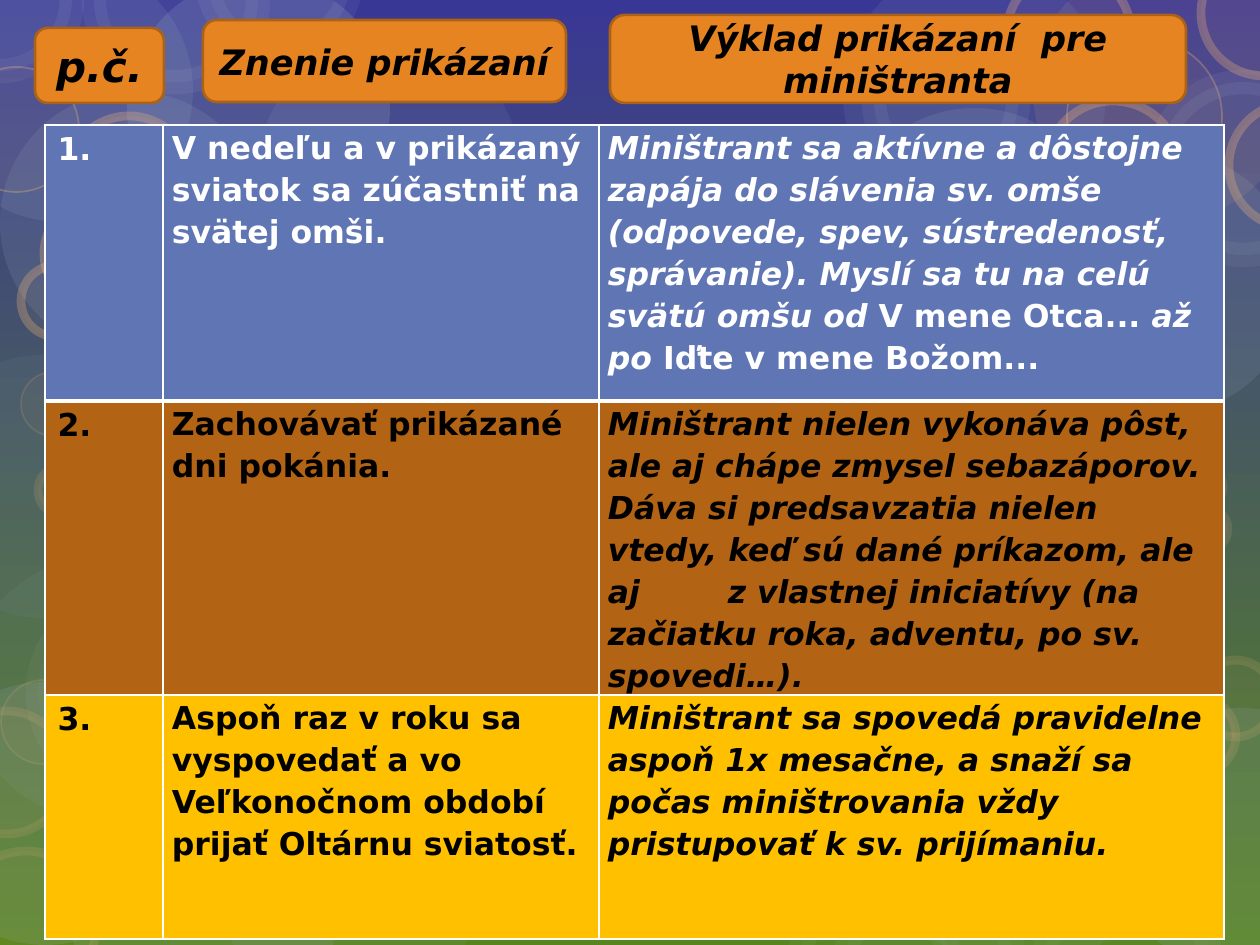
"""Build the slide of church commandments explained for altar servers."""
from lxml import etree
from pptx import Presentation
from pptx import util as u
from pptx.dml.color import RGBColor
from pptx.enum import shapes, text
from pptx.oxml.ns import qn

PX = 914400 / 126
FONT = "DejaVu Sans"
BLACK = RGBColor(0x00, 0x00, 0x00)
WHITE = RGBColor(0xFF, 0xFF, 0xFF)
SKY = RGBColor(0x39, 0x37, 0x95)
GRASS = RGBColor(0x58, 0x85, 0x1E)
MIST = RGBColor(0x9B, 0xAD, 0xC4)
HALO = RGBColor(0xEF, 0xF2, 0xF5)
PEACH = RGBColor(0xF0, 0xB5, 0x7A)
ORANGE = RGBColor(0xE6, 0x84, 0x22)
RUST = RGBColor(0xAA, 0x62, 0x19)
BLUE = RGBColor(0x60, 0x76, 0xB4)
BROWN = RGBColor(0xB2, 0x63, 0x14)
GOLD = RGBColor(0xFF, 0xC0, 0x00)

# fill, fill opacity, outline (colour, points, opacity), circles (left, top, diameter)
BUBBLES = [
    (MIST, 5, None, [(919, 601, 263)]),
    (MIST, 8, None, [(-32, 557, 263), (97, 660, 263), (218, 751, 263), (-88, 355, 263)]),
    (MIST, 10, None, [(72, 151, 263), (258, 39, 263), (843, -37, 263), (890, 708, 263),
                      (850, 330, 168)]),
    (MIST, 14, None, [(-70, -41, 263)]),
    (MIST, 15, None, [(0, 91, 263), (1033, 151, 263), (843, 108, 263)]),
    (MIST, 16, None, [(72, 790, 263), (1110, 708, 263), (-86, 682, 263)]),
    (MIST, 20, None, [(127, -23, 263)]),
    (PEACH, 10, None, [(1033, -41, 263)]),
    (MIST, 10, (HALO, 14, 6), [(1157, 82, 173), (874, 29, 144), (948, 200, 168),
                               (994, 282, 144), (1067, 367, 100), (94, -82, 164),
                               (207, -94, 144), (-72, -73, 144)]),
    (MIST, 6, (HALO, 14, 4), [(38, 596, 193), (796, 895, 156), (844, 883, 171),
                              (1043, 883, 168)]),
    (PEACH, 5, (PEACH, 1, 15), [(1, 680, 84), (1051, 774, 102), (1033, 679, 102),
                                (21, 372, 64), (66, 436, 63)]),
    (PEACH, 5, (PEACH, 5, 15), [(-45, 851, 142), (-55, 711, 123), (961, 722, 102),
                                (1134, 781, 83), (1113, 564, 77), (1159, 697, 77),
                                (1197, 660, 77), (1181, 466, 42), (1157, 488, 42),
                                (1186, 508, 42), (38, 466, 49)]),
    (PEACH, 5, (PEACH, 1, 30), [(-46, 67, 125), (52, 260, 84), (1067, 39, 155),
                                (1029, 183, 84)]),
    (PEACH, 5, (PEACH, 5, 30), [(66, 116, 126), (44, 200, 107), (21, 265, 72),
                                (1007, -29, 124), (1201, -50, 126), (1229, 103, 125),
                                (1046, 101, 134)]),
]
HEADERS = [
    ((35, 28, 129, 75), "p.č.", 24),
    ((203, 20, 363, 82), "Znenie prikázaní", 20),
    ((610, 15, 576, 88), "Výklad prikázaní  pre miništranta", 20),
]
COLUMNS = [118, 436, 625]
# height, fill, text colour, commandment, explanation as (text, italic) runs
ROWS = [
    (276, BLUE, WHITE, "V nedeľu a v prikázaný sviatok sa zúčastniť na svätej omši.",
     [("Miništrant sa aktívne a dôstojne zapája do slávenia sv. omše (odpovede, spev, "
       "sústredenosť, správanie). Myslí sa tu na celú svätú omšu od ", True),
      ("V mene Otca...", False), (" až po ", True), ("Iďte v mene Božom...", False)]),
    (270, BROWN, BLACK, "Zachovávať prikázané dni pokánia.",
     [("Miništrant nielen vykonáva pôst, ale aj chápe zmysel sebazáporov. Dáva si "
       "predsavzatia nielen vtedy, keď sú dané príkazom, ale aj\tz vlastnej iniciatívy "
       "(na začiatku roka, adventu, po sv. spovedi…).", True)]),
    (244, GOLD, BLACK,
     "Aspoň raz v roku sa vyspovedať a vo Veľkonočnom období prijať Oltárnu sviatosť.",
     [("Miništrant sa spovedá pravidelne aspoň 1x mesačne, a snaží sa počas "
       "miništrovania vždy pristupovať k sv. prijímaniu.", True)]),
]


def px(n):
    """Turn pixels into EMU."""
    return u.Emu(round(n * PX))


def set_opacity(sp, parent, percent):
    """Make the solid colour below the given element translucent."""
    clr = sp._element.spPr.find(parent + qn("a:solidFill") + "/" + qn("a:srgbClr"))
    etree.SubElement(clr, qn("a:alpha"), val=str(percent * 1000))


def add_run(p, words, size, color, italic=False):
    """Add a bold run to a paragraph."""
    r = p.add_run()
    r.text = words
    r.font.name, r.font.size = FONT, u.Pt(size)
    r.font.bold, r.font.italic = True, italic
    r.font.color.rgb = color


def add_solid(s, kind, box, fill):
    """Add a filled preset shape without a shadow."""
    sp = s.shapes.add_shape(kind, *map(px, box))
    sp.shadow.inherit = False
    sp.fill.solid()
    sp.fill.fore_color.rgb = fill
    return sp


def add_bubble(s, circle, fill, opacity, outline):
    """Add a translucent background circle."""
    left, top, size = circle
    sp = add_solid(s, shapes.MSO_SHAPE.OVAL, (left, top, size, size), fill)
    set_opacity(sp, "", opacity)
    if outline is None:
        sp.line.fill.background()
        return
    color, width, line_opacity = outline
    sp.line.color.rgb, sp.line.width = color, u.Pt(width)
    set_opacity(sp, qn("a:ln") + "/", line_opacity)


def add_header(s, box, words, size):
    """Add a rounded column heading."""
    sp = add_solid(s, shapes.MSO_SHAPE.ROUNDED_RECTANGLE, box, ORANGE)
    sp.line.color.rgb, sp.line.width = RUST, u.Pt(1.5)
    tf = sp.text_frame
    tf.word_wrap = True
    tf.vertical_anchor = text.MSO_ANCHOR.MIDDLE
    tf.paragraphs[0].alignment = text.PP_ALIGN.CENTER
    add_run(tf.paragraphs[0], words, size, BLACK, True)


def set_borders(cell, top, bottom):
    """Draw white cell borders with the given top and bottom points."""
    tc_pr = cell._tc.get_or_add_tcPr()
    for side, width in (("L", 1), ("R", 1), ("T", top), ("B", bottom)):
        ln = etree.SubElement(tc_pr, qn("a:ln" + side), w=str(u.Pt(width)))
        fill = etree.SubElement(ln, qn("a:solidFill"))
        etree.SubElement(fill, qn("a:srgbClr"), val=str(WHITE))


def add_tab_stop(p, position):
    """Give a paragraph one left tab stop."""
    tabs = etree.SubElement(p._p.get_or_add_pPr(), qn("a:tabLst"))
    etree.SubElement(tabs, qn("a:tab"), pos=str(px(position)), algn="l")


def fill_cell(cell, runs, fill, color, prose):
    """Fill a table cell, with tight insets and open lines for prose."""
    cell.fill.solid()
    cell.fill.fore_color.rgb = fill
    p = cell.text_frame.paragraphs[0]
    if prose:
        cell.margin_left = cell.margin_right = px(9)
        cell.margin_top = cell.margin_bottom = 0
        p.line_spacing = 1.15
    if any("\t" in words for words, _ in runs):
        add_tab_stop(p, 120)
    for words, italic in runs:
        add_run(p, words, 18, color, italic)


def add_commandments(s):
    """Add the numbered table of commandments and explanations."""
    height = sum(row[0] for row in ROWS)
    frame = s.shapes.add_table(len(ROWS), len(COLUMNS), px(45), px(125),
                               px(sum(COLUMNS)), px(height))
    table = frame.table
    table.first_row = table.horz_banding = False
    for column, width in zip(table.columns, COLUMNS):
        column.width = px(width)
    for i, (row_height, fill, color, rule, meaning) in enumerate(ROWS):
        table.rows[i].height = px(row_height)
        contents = [[(f"{i + 1}.", False)], [(rule, False)], meaning]
        for j, runs in enumerate(contents):
            cell = table.cell(i, j)
            set_borders(cell, 3 if i == 1 else 1, 3 if i == 0 else 1)
            fill_cell(cell, runs, fill, color, j > 0)


def paint_background(s):
    """Fill the background with a vertical gradient."""
    fill = s.background.fill
    fill.gradient()
    fill.gradient_angle = 270
    for stop, color in zip(fill.gradient_stops, (SKY, GRASS)):
        stop.color.rgb = color


def main():
    """Build and save the presentation."""
    prs = Presentation()
    prs.slide_width, prs.slide_height = px(1260), px(945)
    s = prs.slides.add_slide(prs.slide_layouts[6])
    paint_background(s)
    for fill, opacity, outline, circles in BUBBLES:
        for circle in circles:
            add_bubble(s, circle, fill, opacity, outline)
    add_commandments(s)
    for header in HEADERS:
        add_header(s, *header)
    prs.save("out.pptx")


if __name__ == "__main__":
    main()
